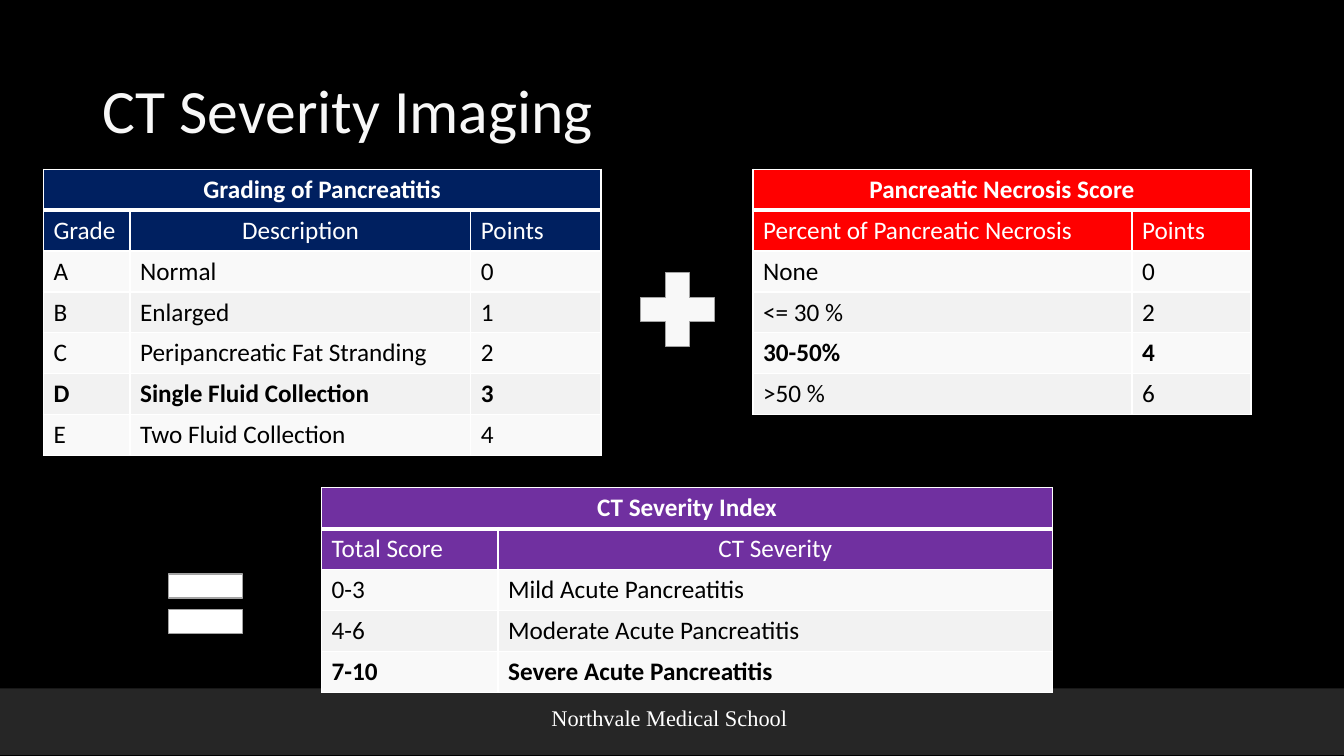
from pptx import Presentation, util as u
from pptx.dml.color import RGBColor
from pptx.enum import shapes, text
from pptx.oxml import parse_xml
from pptx.oxml.ns import nsdecls

BLACK = RGBColor(0, 0, 0)
WHITE = RGBColor(255, 255, 255)
PALE = RGBColor(0xF8, 0xF8, 0xF8)
BANDS = [RGBColor(0xF9, 0xF9, 0xF9), RGBColor(0xF2, 0xF2, 0xF2)]
NAVY = RGBColor(0, 0x20, 0x60)
RED = RGBColor(255, 0, 0)
PURPLE = RGBColor(0x70, 0x30, 0xA0)
DARK = RGBColor(0x26, 0x26, 0x26)
GRAY = RGBColor(0xA3, 0xA3, 0xA3)
LEFT, MID = text.PP_ALIGN.LEFT, text.PP_ALIGN.CENTER

deck = Presentation()
deck.slide_width, deck.slide_height = u.Inches(13.33), u.Inches(7.5)
page = deck.slides.add_slide(deck.slide_layouts[6])
page.background.fill.solid()
page.background.fill.fore_color.rgb = BLACK


def place(*box):
    """Turn percent shares of the slide into left, top, width, height."""
    sides = [deck.slide_width, deck.slide_height] * 2
    return [u.Emu(round(side * part / 100)) for side, part in zip(sides, box)]


def write(frame, words, color, align, form):
    para = frame.paragraphs[0]
    para.alignment = align
    run = para.add_run()
    run.text = words
    run.font.color.rgb = color
    for key, val in form.items():
        setattr(run.font, key, val)
    return para


# Footer band, plus and equals signs
MARKS = [
    (shapes.MSO_SHAPE.RECTANGLE, (0, 91.07, 100, 8.8), DARK, None),
    (shapes.MSO_SHAPE.MATH_PLUS, (46.65, 34.27, 7.5, 13.33), PALE, GRAY),
    (shapes.MSO_SHAPE.MATH_EQUAL, (11.55, 73.2, 7.5, 13.33), WHITE, GRAY),
]
for kind, box, fill, edge in MARKS:
    mark = page.shapes.add_shape(kind, *place(*box))
    mark.shadow.inherit = False
    mark.fill.solid()
    mark.fill.fore_color.rgb = fill
    if edge is None:
        mark.line.fill.background()
    else:
        mark.line.color.rgb = edge
        mark.line.width = u.Pt(1)

# Title and footer text
LABELS = [
    ("CT Severity Imaging", (6.9, 5.33, 86.25, 19.33), PALE, LEFT, 0.9,
     {"name": "Calibri", "size": u.Pt(44)}),
    ("Northvale Medical School", (34.65, 92.4, 30.3, 4.93), WHITE, MID, 1.0,
     {"name": "Times New Roman", "size": u.Pt(16)}),
]
for words, box, color, align, gap, form in LABELS:
    frame = page.shapes.add_textbox(*place(*box)).text_frame
    frame.word_wrap = True
    frame.vertical_anchor = text.MSO_ANCHOR.MIDDLE
    write(frame, words, color, align, form).line_spacing = gap

# Score tables: left, top, color, column shares, bold row, centred head, rows
ROW = 5.41
TABLES = [
    (3.23, 22.4, NAVY, [6.45, 25.36, 9.68], 5, "Description", [
        ["Grading of Pancreatitis"],
        ["Grade", "Description", "Points"],
        ["A", "Normal", "0"],
        ["B", "Enlarged", "1"],
        ["C", "Peripancreatic Fat Stranding", "2"],
        ["D", "Single Fluid Collection", "3"],
        ["E", "Two Fluid Collection", "4"]]),
    (56.03, 22.4, RED, [28.2, 8.85], 4, None, [
        ["Pancreatic Necrosis Score"],
        ["Percent of Pancreatic Necrosis", "Points"],
        ["None", "0"],
        ["<= 30 %", "2"],
        ["30-50%", "4"],
        [">50 %", "6"]]),
    (23.93, 64.53, PURPLE, [13.13, 41.25], 4, "CT Severity", [
        ["CT Severity Index"],
        ["Total Score", "CT Severity"],
        ["0-3", "Mild Acute Pancreatitis"],
        ["4-6", "Moderate Acute Pancreatitis"],
        ["7-10", "Severe Acute Pancreatitis"]]),
]
for left, top, tint, cols, strong, center, rows in TABLES:
    box = place(left, top, sum(cols), ROW * len(rows))
    grid = page.shapes.add_table(len(rows), len(cols), *box).table
    for col, share in zip(grid.columns, cols):
        col.width = place(share)[0]
    for r, words in enumerate(rows):
        grid.rows[r].height = place(0, ROW)[1]
        for c in range(len(cols)):
            cell = grid.cell(r, c)
            cell.fill.solid()
            cell.fill.fore_color.rgb = tint if r < 2 else BANDS[r % 2]
            for i, side in enumerate("LRTB"):
                thick = (r, side) in [(0, "B"), (1, "T")]
                edge = parse_xml(
                    f'<a:ln{side} {nsdecls("a")} w="{u.Pt(3 if thick else 1)}">'
                    '<a:solidFill><a:srgbClr val="FFFFFF"/></a:solidFill>'
                    f'</a:ln{side}>')
                cell._tc.get_or_add_tcPr().insert(i, edge)
            if c < len(words):
                align = MID if r == 0 or words[c] == center else LEFT
                form = {"name": "Calibri", "size": u.Pt(18), "bold": r in (0, strong)}
                write(cell.text_frame, words[c], WHITE if r < 2 else BLACK, align, form)
    grid.cell(0, 0).merge(grid.cell(0, len(cols) - 1))

deck.save("out.pptx")
